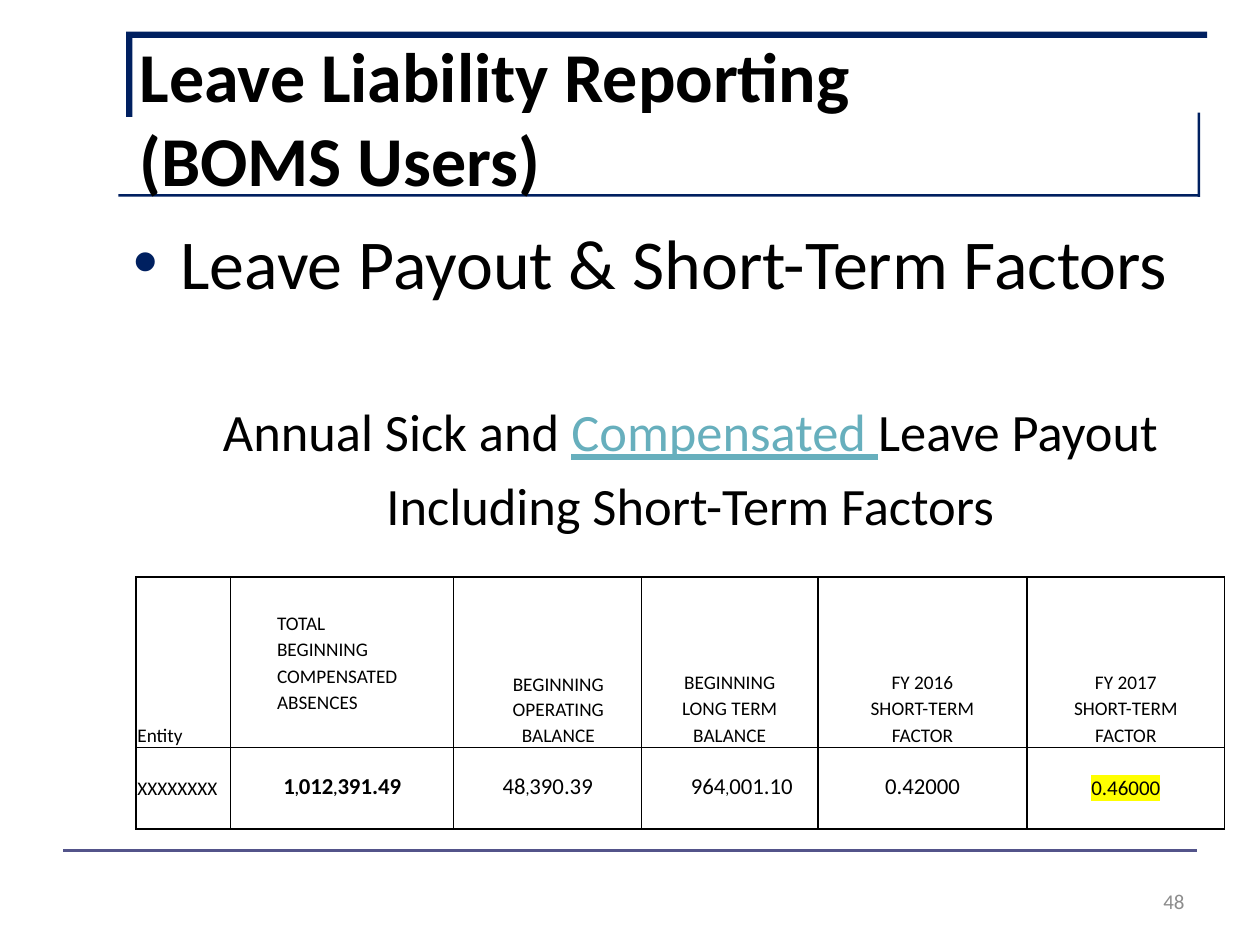
"""Build the leave liability reporting slide with its short-term factor table."""
from lxml.etree import SubElement
from pptx import Presentation
from pptx.dml.color import RGBColor
from pptx.enum.shapes import MSO_CONNECTOR, MSO_SHAPE
from pptx.enum.text import MSO_ANCHOR as Anchor, PP_ALIGN as Align
from pptx.oxml.ns import qn
from pptx.util import Pt

BLACK = RGBColor(0x00, 0x00, 0x00)
NAVY = RGBColor(0x00, 0x20, 0x60)
PURPLE = RGBColor(0x53, 0x54, 0x8A)
TEAL = RGBColor(0x67, 0xAF, 0xBD)
GRAY = RGBColor(0x8C, 0x8C, 0x8C)
YELLOW = RGBColor(0xFF, 0xFF, 0x00)


def write(paragraph, text, size=11, color=BLACK, bold=False, underline=None, highlight=None):
    run = paragraph.add_run()
    run.text = text
    font = run.font
    font.size = Pt(size)
    font.bold = bold
    font.underline = underline
    font.color.rgb = color
    if highlight is not None:
        mark = SubElement(font._element, qn("a:highlight"))
        SubElement(mark, qn("a:srgbClr"), val=str(highlight))
    font.name = "Calibri"


def add_text_frame(left, top, width, height, anchor):
    frame = slide.shapes.add_textbox(Pt(left), Pt(top), Pt(width), Pt(height)).text_frame
    frame.word_wrap = True
    frame.vertical_anchor = anchor
    return frame


presentation = Presentation()
presentation.slide_width = Pt(720)
presentation.slide_height = Pt(540)
slide = presentation.slides.add_slide(presentation.slide_layouts[6])

footer_line = slide.shapes.add_connector(MSO_CONNECTOR.STRAIGHT, Pt(36), Pt(486), Pt(684), Pt(486))
footer_line.line.color.rgb = PURPLE
footer_line.line.width = Pt(1.5)
SubElement(footer_line._element.spPr, qn("a:effectLst"))

title_bars = [
    (67.7, 110.9, 617.8, 1.5),
    (72, 18, 617.8, 3.6),
    (72, 18.7, 3.6, 48.2),
    (684.3, 64.4, 1.5, 48.2),
]
for left, top, width, height in title_bars:
    bar = slide.shapes.add_shape(MSO_SHAPE.RECTANGLE, Pt(left), Pt(top), Pt(width), Pt(height))
    bar.shadow.inherit = False
    bar.fill.solid()
    bar.fill.fore_color.rgb = NAVY
    bar.line.fill.background()

title = add_text_frame(72.7, 21.6, 652.3, 90, Anchor.MIDDLE).paragraphs[0]
write(title, "Leave Liability Reporting ", size=40, bold=True)
title.add_line_break()
write(title, "(BOMS Users)", size=40, bold=True)

body = add_text_frame(69.1, 102.2, 650.9, 383.8, Anchor.TOP)
body.margin_top = Pt(23)
bullet = body.paragraphs[0]
properties = bullet._p.get_or_add_pPr()
properties.set("marL", str(Pt(27)))
properties.set("indent", str(Pt(-27)))
bullet_color = SubElement(properties, qn("a:buClr"))
SubElement(bullet_color, qn("a:srgbClr"), val=str(NAVY))
SubElement(properties, qn("a:buFont"), typeface="Arial")
SubElement(properties, qn("a:buChar"), char="•")
write(bullet, "Leave Payout & Short-Term Factors", size=40)

caption = body.add_paragraph()
caption.alignment = Align.CENTER
caption.space_before = Pt(55)
write(caption, "Annual Sick and ", size=30)
write(caption, "Compensated ", size=30, color=TEAL, underline=True)
write(caption, "Leave Payout", size=30)
caption = body.add_paragraph()
caption.alignment = Align.CENTER
caption.space_before = Pt(6)
write(caption, "Including Short-Term Factors", size=30)

headers = [
    ["Entity"],
    ["TOTAL", "BEGINNING", "COMPENSATED", "ABSENCES"],
    ["BEGINNING", "OPERATING", "BALANCE"],
    ["BEGINNING", "LONG TERM", "BALANCE"],
    ["FY 2016", "SHORT-TERM", "FACTOR"],
    ["FY 2017", "SHORT-TERM", "FACTOR"],
]
values = ["XXXXXXXX", "1,012,391.49", "48,390.39", "964,001.10", "0.42000", "0.46000"]
column_widths = [54, 127.5, 107.3, 100.8, 119.5, 113]
row_heights = [97.2, 46.8]
left_margins = {(0, 1): 26.5, (0, 2): 13, (1, 3): 14.4}

table = slide.shapes.add_table(
    2, 6, Pt(77.8), Pt(329.8), Pt(sum(column_widths)), Pt(sum(row_heights))
).table
table.first_row = False
table.horz_banding = False
for column, width in zip(table.columns, column_widths):
    column.width = Pt(width)
for row, height in zip(table.rows, row_heights):
    row.height = Pt(height)

for row in range(2):
    for column in range(6):
        cell = table.cell(row, column)
        cell.margin_left = Pt(left_margins.get((row, column), 0.7))
        cell.margin_right = Pt(0.7)
        cell.margin_top = cell.margin_bottom = Pt(0)
        cell.vertical_anchor = Anchor.MIDDLE if row == 1 or column == 1 else Anchor.BOTTOM
        cell_properties = cell._tc.get_or_add_tcPr()
        for edge in ("a:lnL", "a:lnR", "a:lnT", "a:lnB"):
            border = SubElement(cell_properties, qn(edge), w=str(Pt(1)))
            border_fill = SubElement(border, qn("a:solidFill"))
            SubElement(border_fill, qn("a:srgbClr"), val=str(BLACK))
        cell.fill.background()

for column, lines in enumerate(headers):
    frame = table.cell(0, column).text_frame
    for index, line in enumerate(lines):
        paragraph = frame.add_paragraph() if index else frame.paragraphs[0]
        paragraph.alignment = Align.LEFT if column < 2 else Align.CENTER
        paragraph.line_spacing = 1.07 if column in (0, 2) or line.startswith("FY") else Pt(15.1)
        write(paragraph, line)

for column, value in enumerate(values):
    paragraph = table.cell(1, column).text_frame.paragraphs[0]
    paragraph.alignment = Align.CENTER if column else Align.LEFT
    paragraph.line_spacing = Pt(14.5) if column else 1.07
    size = {0: 11, 5: 12}.get(column, 13)
    for index, digits in enumerate(value.split(",")):
        if index:
            write(paragraph, ",", size=9, bold=column == 1)
        write(paragraph, digits, size=size, bold=column == 1,
              highlight=YELLOW if column == 5 else None)

number = add_text_frame(516.2, 500.4, 167.8, 28.8, Anchor.MIDDLE).paragraphs[0]
number.alignment = Align.RIGHT
write(number, "48", size=12, color=GRAY)

presentation.save("out.pptx")
